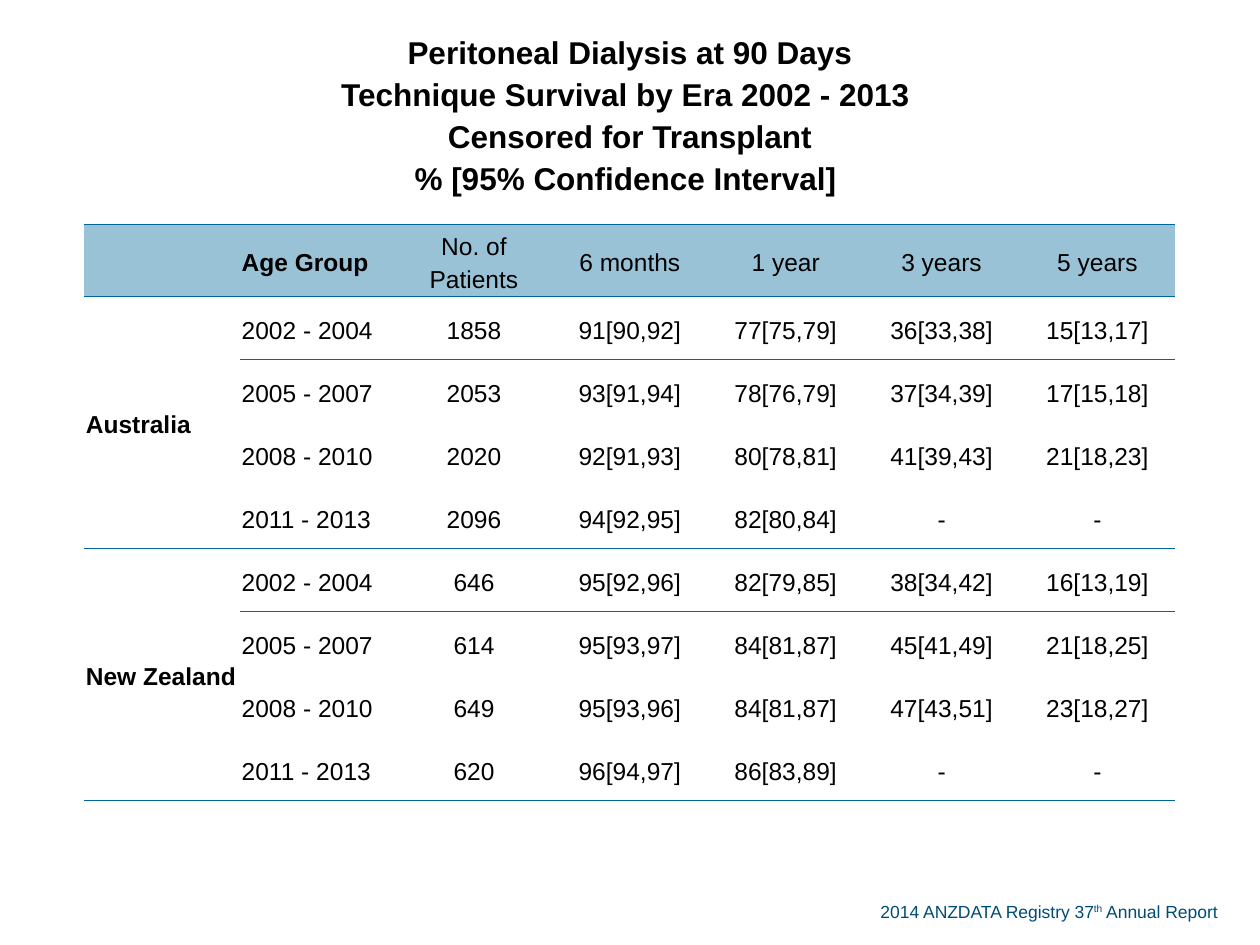
from lxml.etree import SubElement
from pptx import Presentation
from pptx.dml.color import RGBColor
from pptx.enum.text import MSO_ANCHOR, PP_ALIGN
from pptx.oxml.ns import qn
from pptx.util import Cm, Pt

COLORS = {"text": "000000", "footer": "004D73", "rule": "006699", "header": "99C2D6"}
NO_STYLE = "{2D5ABB26-0587-4C30-8999-92F81FD0307C}"
LEFT, CENTER = PP_ALIGN.LEFT, PP_ALIGN.CENTER


def write(p, text, size=14, color="text", bold=False, align=LEFT, spacing=1.19, baseline=0):
    p.alignment = align
    p.line_spacing = spacing
    for i, line in enumerate(text.split("\n")):
        if i:
            p.add_line_break()
        r = p.add_run()
        r.text = line
        r.font.name = "Arial"
        r.font.size = Pt(size)
        r.font.bold = bold
        r.font.color.rgb = RGBColor.from_string(COLORS[color])
        if baseline:
            r.font._element.set("baseline", str(baseline))


def add_rule(cell, tag):
    ln = SubElement(cell._tc.get_or_add_tcPr(), qn(tag), w=str(Pt(0.5)))
    SubElement(SubElement(ln, qn("a:solidFill")), qn("a:srgbClr"), val=COLORS["rule"])


headers = ["", "Age Group", "No. of Patients", "6 months", "1 year", "3 years", "5 years"]
eras = ["2002 - 2004", "2005 - 2007", "2008 - 2010", "2011 - 2013"]
survival = {
    "Australia": [
        ["1858", "91[90,92]", "77[75,79]", "36[33,38]", "15[13,17]"],
        ["2053", "93[91,94]", "78[76,79]", "37[34,39]", "17[15,18]"],
        ["2020", "92[91,93]", "80[78,81]", "41[39,43]", "21[18,23]"],
        ["2096", "94[92,95]", "82[80,84]", "-", "-"],
    ],
    "New Zealand": [
        ["646", "95[92,96]", "82[79,85]", "38[34,42]", "16[13,19]"],
        ["614", "95[93,97]", "84[81,87]", "45[41,49]", "21[18,25]"],
        ["649", "95[93,96]", "84[81,87]", "47[43,51]", "23[18,27]"],
        ["620", "96[94,97]", "86[83,89]", "-", "-"],
    ],
}
rows = [headers]
for country, results in survival.items():
    for i, (era, values) in enumerate(zip(eras, results)):
        rows.append(["" if i else country, era] + values)

prs = Presentation()
prs.slide_width, prs.slide_height = Cm(25.4), Cm(19.05)
s = prs.slides.add_slide(prs.slide_layouts[6])

footer = s.shapes.add_textbox(Cm(17.5), Cm(18.03), Cm(7.6), Cm(0.69))
footer.text_frame.word_wrap = True
p = footer.text_frame.paragraphs[0]
for text, baseline in [("2014 ANZDATA Registry 37", 0), ("th", 30000), (" Annual Report", 0)]:
    write(p, text, size=10, color="footer", spacing=1.0, baseline=baseline)

heights = [4.52, 1.45] + [1.27] * 8
frame = s.shapes.add_table(len(heights), 7, Cm(1.7), Cm(0), Cm(22), Cm(sum(heights)))
frame._element.xpath(".//a:tableStyleId")[0].text = NO_STYLE
table = frame.table
table.first_row = table.horz_banding = False
for row, height in zip(table.rows, heights):
    row.height = Cm(height)
for column in table.columns:
    column.width = Cm(22 / 7)

table.cell(0, 0).merge(table.cell(0, 6))
for top in (2, 6):
    table.cell(top, 0).merge(table.cell(top + 3, 0))

for i, row in enumerate(table.rows):
    for j, cell in enumerate(row.cells):
        cell.vertical_anchor = MSO_ANCHOR.MIDDLE
        cell.margin_left = cell.margin_right = cell.margin_top = Cm(0.03)
        cell.margin_bottom = Cm(0)
        if i in (1, 2, 6):
            add_rule(cell, "a:lnT")
        if i in (0, 1, 5, 9) or (j == 0 and i in (2, 6)):
            add_rule(cell, "a:lnB")
        if i == 1:
            cell.fill.solid()
            cell.fill.fore_color.rgb = RGBColor.from_string(COLORS["header"])
        else:
            cell.fill.background()
        if i and rows[i - 1][j]:
            bold = j == 0 or (i, j) == (1, 1)
            write(cell.text_frame.paragraphs[0], rows[i - 1][j], bold=bold,
                  align=CENTER if j > 1 else LEFT)

tf = table.cell(0, 0).text_frame
write(tf.paragraphs[0], "Peritoneal Dialysis at 90 Days", size=18, bold=True, align=CENTER)
write(tf.add_paragraph(),
      "Technique Survival by Era 2002 - 2013 \nCensored for Transplant\n% [95% Confidence Interval] ",
      size=18, bold=True, align=CENTER)

prs.save("out.pptx")
